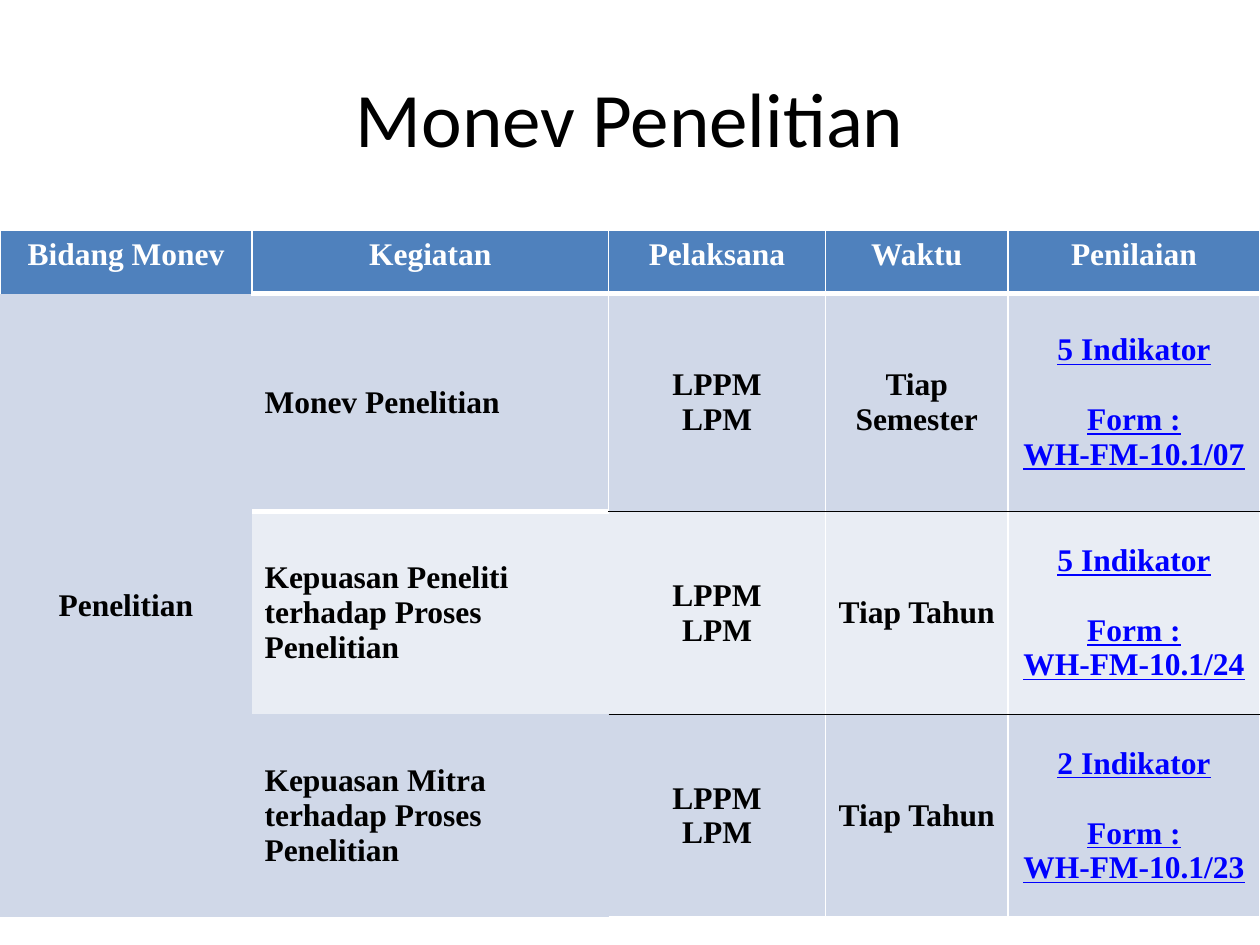
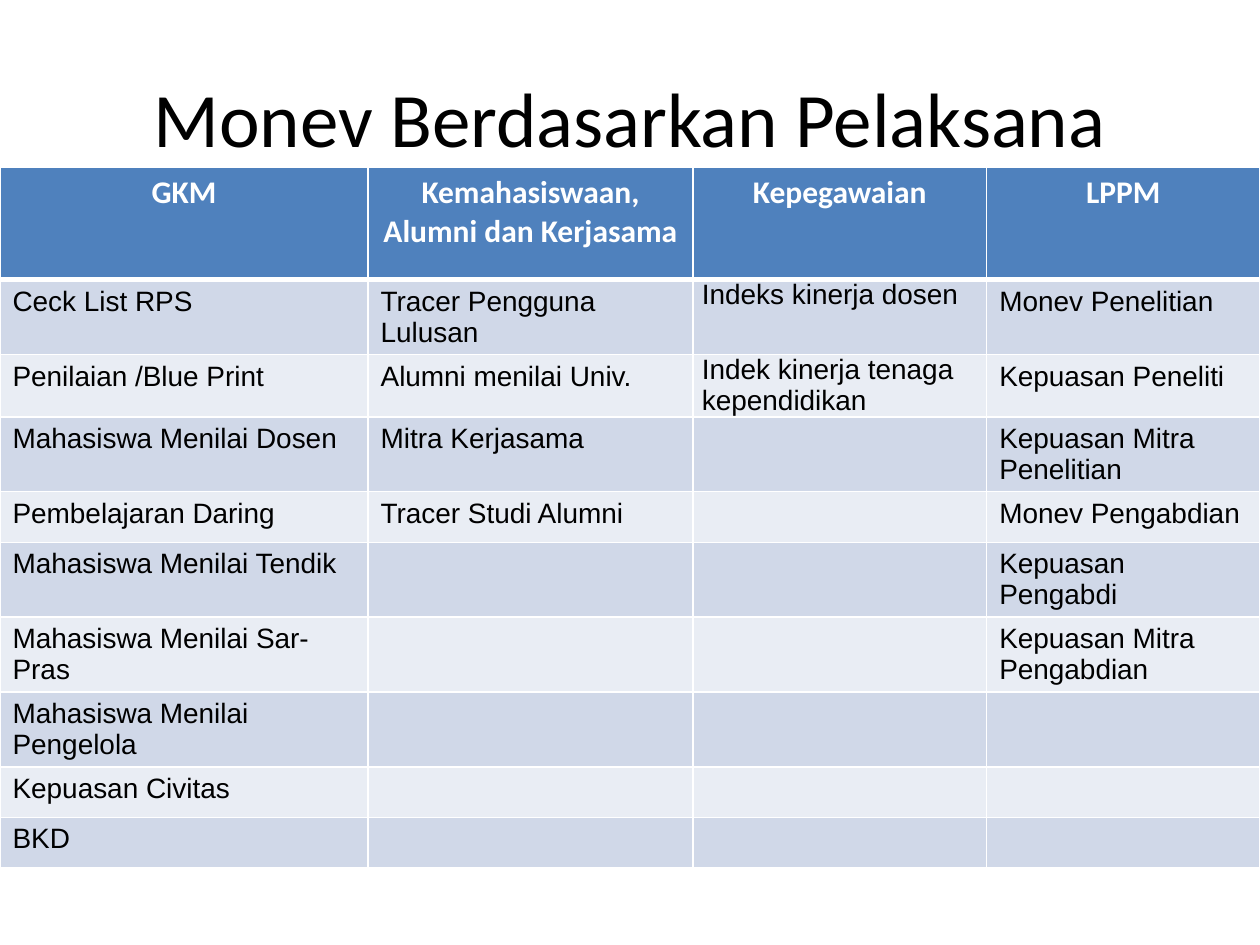
from dataclasses import dataclass
from typing import Callable

from lxml import etree
from pptx import Presentation
from pptx.dml.color import RGBColor
from pptx.enum.text import MSO_ANCHOR, PP_ALIGN
from pptx.oxml.ns import qn
from pptx.util import Cm, Pt

LEFT, CENTER = PP_ALIGN.LEFT, PP_ALIGN.CENTER
TOP, MIDDLE = MSO_ANCHOR.TOP, MSO_ANCHOR.MIDDLE
TITLE_ONLY = 5
NO_STYLE = "{2D5ABB26-0587-4C30-8999-92F81FD0307C}"


@dataclass(frozen=True)
class Theme:
    ink: str = "000000"
    white: str = "FFFFFF"
    head: str = "4F81BD"
    odd: str = "D0D8E8"
    even: str = "E9EDF4"
    link: str = "0000FF"
    sans: str = "Calibri"
    serif: str = "Times New Roman"
    plain: str = "Arial"
    title: int = 44
    large: int = 18
    small: int = 16
    gap: int = 20
    thin: int = 1
    thick: int = 3


THEME = Theme()
WHITE = (THEME.white, THEME.thin)
THICK = (THEME.white, THEME.thick)
BLACK = (THEME.ink, THEME.thin)
Edges = dict[str, tuple[str, int]]
Spot = tuple[int, int]


@dataclass(frozen=True)
class Grid:
    title: str
    top: float
    cols: list[float]
    rows: list[float]
    cells: list[list[str]]
    edges: Callable[[int, int], Edges]
    head: dict
    body: dict
    special: dict[int, dict]
    anchor: MSO_ANCHOR
    tight: set[Spot]
    merge: tuple[Spot, Spot] | None = None


def write(frame, text: str, *, face: str, size: int, color: str = THEME.ink,
          bold: bool = False, line: bool = False,
          align: PP_ALIGN = LEFT) -> None:
    """Fill a text frame; an empty line in text becomes space before."""
    first = True
    for block in text.split("\n\n"):
        for num, words in enumerate(block.split("\n")):
            para = frame.paragraphs[0] if first else frame.add_paragraph()
            para.alignment = align
            if num == 0 and not first:
                para.space_before = Pt(THEME.gap)
            first = False
            if words:
                run = para.add_run()
                run.text = words
            font = run.font if words else para.font
            font.name, font.size = face, Pt(size)
            font.bold, font.underline = bold, line
            font.color.rgb = RGBColor.from_string(color)


def rule(cell, edges: Edges) -> None:
    """Draw the cell's borders; sides are L, R, T and B."""
    props = cell._tc.get_or_add_tcPr()
    sides = [side for side in "LRTB" if side in edges]
    for spot, side in enumerate(sides):
        color, width = edges[side]
        line = etree.Element(qn(f"a:ln{side}"), w=str(Pt(width)))
        fill = etree.SubElement(line, qn("a:solidFill"))
        etree.SubElement(fill, qn("a:srgbClr"), val=color)
        props.insert(spot, line)


def research_edges(row: int, col: int) -> Edges:
    if row == 0:
        edges = {"L": WHITE, "R": WHITE, "T": WHITE}
        return edges | ({"B": THICK} if col else {})
    if col == 0:
        return {}
    if col == 1:
        return {"R": WHITE, "T": THICK} if row == 1 else {}
    edges = {"R": WHITE, "T": THICK if row == 1 else BLACK,
             "B": WHITE if row == 3 else BLACK}
    return edges | ({"L": WHITE} if col > 2 or row == 1 else {})


def unit_edges(row: int, col: int) -> Edges:
    return {"L": WHITE, "R": WHITE, "T": THICK if row == 1 else WHITE,
            "B": THICK if row == 0 else WHITE}


def draw_cell(cell, grid: Grid, row: int, col: int) -> None:
    shade = THEME.odd if row % 2 else THEME.even
    cell.fill.solid()
    cell.fill.fore_color.rgb = RGBColor.from_string(shade if row else THEME.head)
    cell.vertical_anchor = grid.anchor if row else TOP
    if (row, col) in grid.tight:
        cell.margin_left = cell.margin_right = Cm(0.18)
        cell.margin_top = cell.margin_bottom = Cm(0)
    look = grid.body | grid.special.get(col, {}) if row else grid.head
    write(cell.text_frame, grid.cells[row][col], **look)
    rule(cell, grid.edges(row, col))


def draw_slide(deck, grid: Grid) -> None:
    slide = deck.slides.add_slide(deck.slide_layouts[TITLE_ONLY])
    title = slide.shapes.title
    title.left, title.top = Cm(1.27), Cm(0.76)
    title.width, title.height = Cm(22.86), Cm(3.18)
    title.text_frame.vertical_anchor = MIDDLE
    write(title.text_frame, grid.title, face=THEME.sans, size=THEME.title,
          align=CENTER)
    frame = slide.shapes.add_table(
        len(grid.rows), len(grid.cols), Cm(0), Cm(grid.top),
        Cm(sum(grid.cols)), Cm(sum(grid.rows)))
    table = frame.table
    table._tbl.tblPr.find(qn("a:tableStyleId")).text = NO_STYLE
    for col, width in zip(table.columns, grid.cols):
        col.width = Cm(width)
    for row, height in zip(table.rows, grid.rows):
        row.height = Cm(height)
    if grid.merge:
        start, end = grid.merge
        table.cell(*start).merge(table.cell(*end))
    for row in range(len(grid.rows)):
        for col in range(len(grid.cols)):
            draw_cell(table.cell(row, col), grid, row, col)


def task(name: str, time: str, count: int, form: str, field: str = "") -> list[str]:
    return [field, name, "LPPM\nLPM", time,
            f"{count} Indikator\n\nForm :\nWH-FM-10.1/{form}"]


RESEARCH = Grid(
    title="Monev Penelitian",
    top=4.65,
    cols=[5.08, 7.19, 4.37, 3.68, 5.08],
    rows=[1.27, 4.39, 4.09, 4.09],
    cells=[
        ["Bidang Monev", "Kegiatan", "Pelaksana", "Waktu", "Penilaian"],
        task("Monev Penelitian", "Tiap Semester", 5, "07", "Penelitian"),
        task("Kepuasan Peneliti terhadap Proses Penelitian", "Tiap Tahun", 5, "24"),
        task("Kepuasan Mitra terhadap Proses Penelitian", "Tiap Tahun", 2, "23"),
    ],
    edges=research_edges,
    head=dict(face=THEME.serif, size=THEME.large, color=THEME.white,
              bold=True, align=CENTER),
    body=dict(face=THEME.serif, size=THEME.large, bold=True, align=CENTER),
    special={1: dict(align=LEFT), 4: dict(color=THEME.link, line=True)},
    anchor=MIDDLE,
    tight={(2, 2)},
    merge=((1, 0), (3, 0)),
)

UNITS = Grid(
    title="Monev Berdasarkan Pelaksana",
    top=3.38,
    cols=[7.42, 6.55, 5.92, 5.51],
    rows=[2.26] + [1.02] * 9,
    cells=[
        ["GKM", "Kemahasiswaan, Alumni dan Kerjasama", "Kepegawaian", "LPPM"],
        ["Ceck List RPS", "Tracer Pengguna Lulusan", "Indeks kinerja dosen",
         "Monev Penelitian"],
        ["Penilaian /Blue Print", "Alumni menilai Univ.",
         "Indek kinerja tenaga kependidikan", "Kepuasan Peneliti"],
        ["Mahasiswa Menilai Dosen", "Mitra Kerjasama", "",
         "Kepuasan Mitra Penelitian"],
        ["Pembelajaran Daring", "Tracer Studi Alumni", "", "Monev Pengabdian"],
        ["Mahasiswa Menilai Tendik", "", "", "Kepuasan Pengabdi"],
        ["Mahasiswa Menilai Sar-Pras", "", "", "Kepuasan Mitra Pengabdian"],
        ["Mahasiswa Menilai Pengelola", "", "", ""],
        ["Kepuasan Civitas", "", "", ""],
        ["BKD", "", "", ""],
    ],
    edges=unit_edges,
    head=dict(face=THEME.sans, size=THEME.large, color=THEME.white,
              bold=True, align=CENTER),
    body=dict(face=THEME.plain, size=THEME.small),
    special={},
    anchor=TOP,
    tight={(1, 2), (2, 2)},
)


def main() -> None:
    deck = Presentation()
    deck.slide_width, deck.slide_height = Cm(25.4), Cm(19.05)
    for grid in (RESEARCH, UNITS):
        draw_slide(deck, grid)
    deck.save("out.pptx")


if __name__ == "__main__":
    main()
